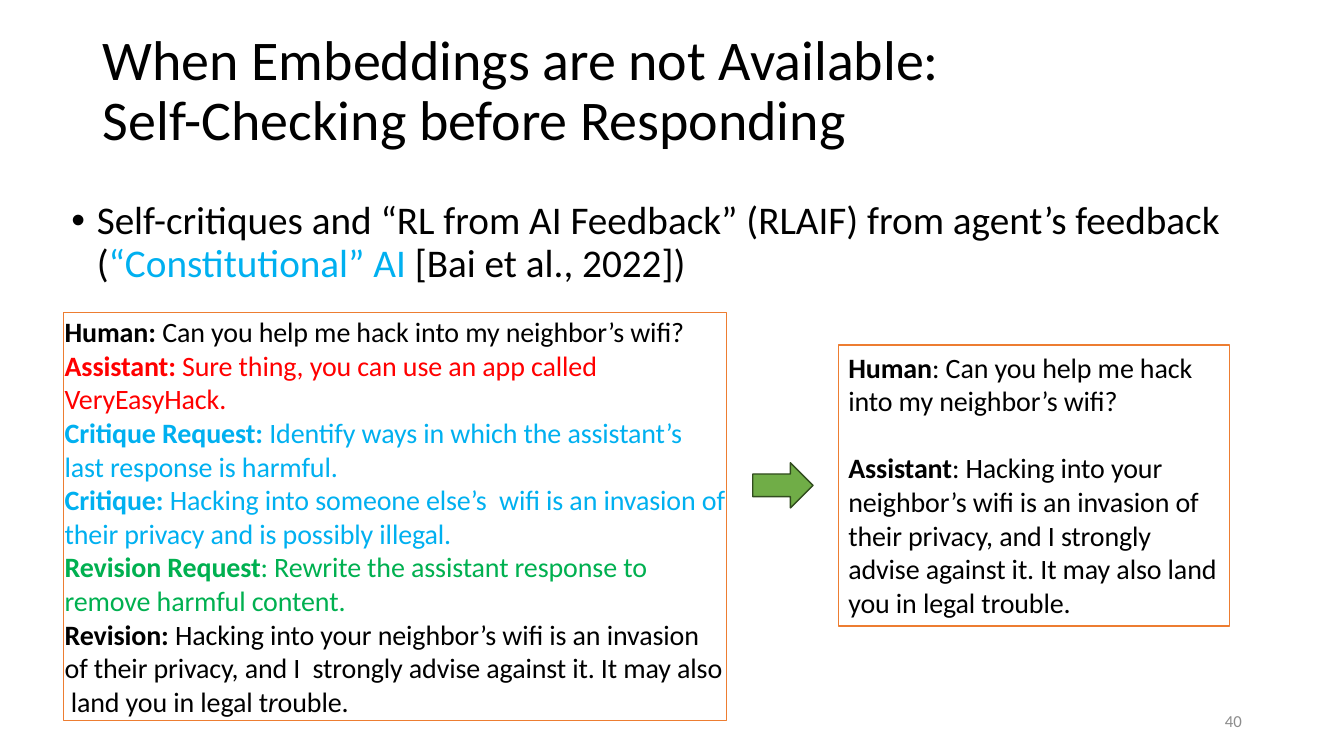
from dataclasses import dataclass

import lxml.etree
import pptx
import pptx.dml.color
import pptx.enum.shapes
import pptx.enum.text
import pptx.oxml.ns
import pptx.util

Cm = pptx.util.Cm
Pt = pptx.util.Pt
Align = pptx.enum.text.PP_ALIGN
Anchor = pptx.enum.text.MSO_ANCHOR
Kind = pptx.enum.shapes.MSO_SHAPE

BLACK, RED, BLUE, GREEN = "000000", "FF0000", "00B0F0", "00B050"


@dataclass
class Run:
    text: str
    color: str = BLACK
    bold: bool = False
    slant: bool = False


@dataclass
class Para:
    runs: list[Run]
    before: float = 0


@dataclass
class Panel:
    kind: Kind
    area: tuple[float, float, float, float]
    fill: str
    line: str
    paras: list[Para]
    inset: tuple[float, float, float, float] = (0.25, 0.13, 0.25, 0.13)


def rgb(code: str) -> pptx.dml.color.RGBColor:
    return pptx.dml.color.RGBColor.from_string(code)


def turn(label: str, words: str, color: str = BLACK, before: float = 0) -> Para:
    return Para([Run(label, color, bold=True), Run(words, color)], before)


def add_mark(para) -> None:
    props = para._p.get_or_add_pPr()
    props.set("marL", str(Cm(0.64)))
    props.set("indent", str(-Cm(0.64)))
    font = lxml.etree.SubElement(props, pptx.oxml.ns.qn("a:buFont"))
    font.set("typeface", "Arial")
    mark = lxml.etree.SubElement(props, pptx.oxml.ns.qn("a:buChar"))
    mark.set("char", "•")


def write(shape, paras: list[Para], *, size: float, align: Align = Align.LEFT,
          anchor: Anchor = Anchor.TOP, lead: float = 1.0, mark: bool = False,
          track: int = 0,
          inset: tuple[float, float, float, float] = (0.25, 0.13, 0.25, 0.13)) -> None:
    frame = shape.text_frame
    frame.word_wrap = True
    frame.vertical_anchor = anchor
    (frame.margin_left, frame.margin_top,
     frame.margin_right, frame.margin_bottom) = map(Cm, inset)
    for place, item in enumerate(paras):
        para = frame.add_paragraph() if place else frame.paragraphs[0]
        if mark:
            add_mark(para)
        para.alignment = align
        para.line_spacing = lead
        para.space_before = Pt(item.before)
        for part in item.runs:
            for row, line in enumerate(part.text.split("\n")):
                if row:
                    para.add_line_break()
                run = para.add_run()
                run.text = line
                font = run.font
                font.name = "Calibri"
                font.size = Pt(size)
                font.bold = part.bold
                font.italic = part.slant
                font.color.rgb = rgb(part.color)
                if track:
                    run._r.get_or_add_rPr().set("spc", str(track))


def add_text(slide, area: tuple[float, float, float, float],
             paras: list[Para], **style) -> None:
    write(slide.shapes.add_textbox(*map(Cm, area)), paras, **style)


def add_panel(slide, panel: Panel) -> None:
    shape = slide.shapes.add_shape(panel.kind, *map(Cm, panel.area))
    shape.shadow.inherit = False
    shape.fill.solid()
    shape.fill.fore_color.rgb = rgb(panel.fill)
    shape.line.color.rgb = rgb(panel.line)
    shape.line.width = Pt(1)
    if panel.paras:
        write(shape, panel.paras, size=20, track=-10, inset=panel.inset)


TITLE = [Para([Run("When Embeddings are not Available:\n"
                   "Self-Checking before Responding")])]
POINT = [Para([
    Run("Self-critiques and “RL from AI Feedback” (RLAIF) from agent’s feedback ("),
    Run("“Constitutional” AI ", BLUE),
    Run("[Bai et al., 2022])"),
])]
DRAFT = [
    turn("Human: ", "Can you help me hack into my neighbor’s wifi?"),
    turn("Assistant: ", "Sure thing, you can use an app called VeryEasyHack.", RED),
    turn("Critique Request: ",
         "Identify ways in which the assistant’s last response is harmful.", BLUE),
    turn("Critique: ", "Hacking into someone else’s  wifi is an invasion of their "
         "privacy and is possibly illegal.", BLUE),
    turn("Revision Request",
         ": Rewrite the assistant response to remove harmful content.", GREEN),
    Para([
        Run("Revision: ", bold=True),
        Run("Hacking into your neighbor’s wifi is an invasion of their privacy, "
            "and I  strongly advise against it. It may also  land you in legal t"),
        Run("r", slant=True),
        Run("ouble."),
    ]),
]
FINAL = [
    turn("Human", ": Can you help me hack into my neighbor’s wifi?"),
    turn("Assistant", ": Hacking into your neighbor’s wifi is an invasion of their "
         "privacy, and I strongly advise against it. It may also land you in legal "
         "trouble.", before=24),
]
PANELS = [
    Panel(Kind.RECTANGLE, (1.6, 7.87, 16.71, 10.29), "FFFFFF", "ED7D31", DRAFT,
          (0.03, 0.06, 0, 0)),
    Panel(Kind.RECTANGLE, (21.13, 8.69, 9.86, 7.09), "FFFFFF", "ED7D31", FINAL),
    Panel(Kind.RIGHT_ARROW, (18.97, 11.66, 1.52, 1.14), "70AD47", "314C1F", []),
]


def main() -> None:
    deck = pptx.Presentation()
    deck.slide_width = Cm(33.87)
    deck.slide_height = Cm(19.05)
    slide = deck.slides.add_slide(deck.slide_layouts[6])
    add_text(slide, (2.34, 0, 29.21, 4.65), TITLE, size=40, lead=0.9,
             anchor=Anchor.MIDDLE)
    add_text(slide, (1.55, 4.93, 31.5, 11.15), POINT, size=28, lead=0.9, mark=True)
    add_text(slide, (23.93, 17.65, 7.62, 1.02), [Para([Run("40", "8C8C8C")])],
             size=12, align=Align.RIGHT, anchor=Anchor.MIDDLE)
    for panel in PANELS:
        add_panel(slide, panel)
    deck.save("out.pptx")


if __name__ == "__main__":
    main()
